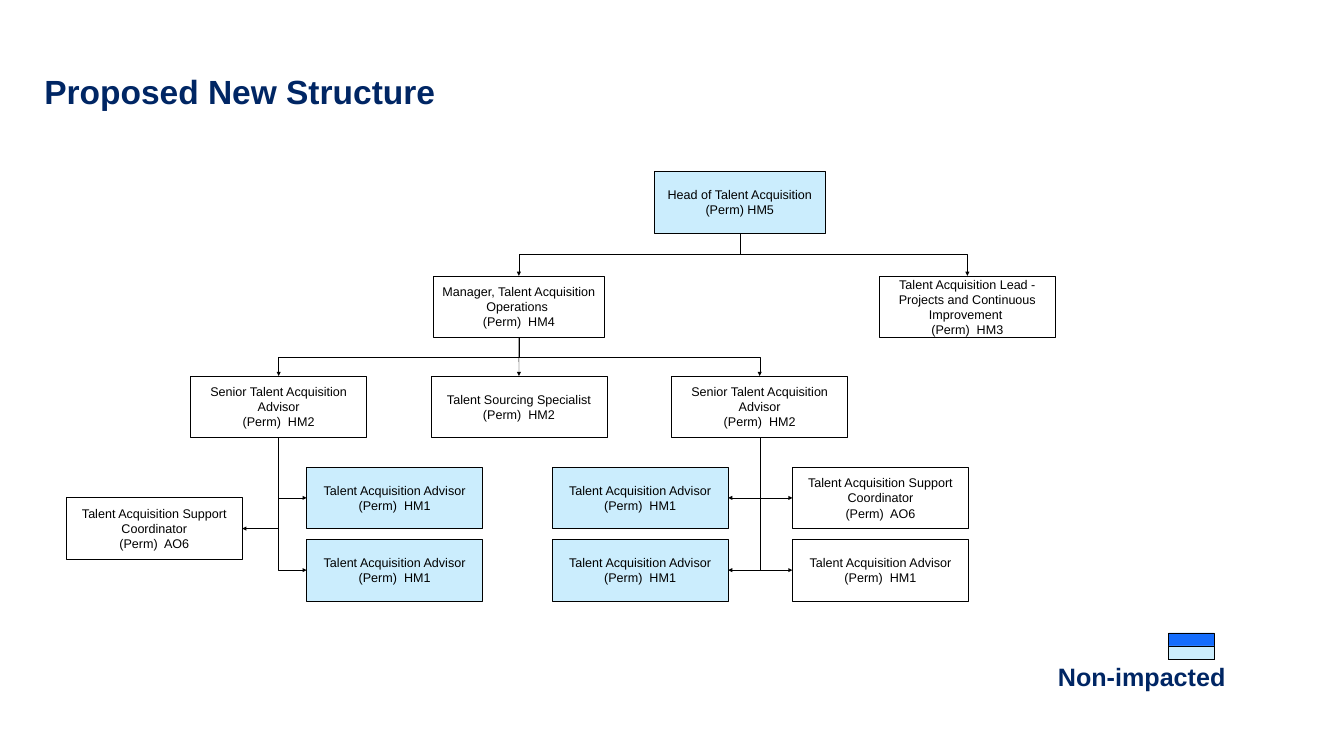
from lxml import etree
from pptx import Presentation
from pptx.dml.color import RGBColor
from pptx.enum import shapes, text
from pptx.oxml.ns import qn
from pptx.util import Cm, Pt

NAVY = RGBColor(0x00, 0x26, 0x64)
BLACK = RGBColor(0x00, 0x00, 0x00)
BLUE = RGBColor(0x14, 0x6C, 0xFD)
LIGHT_BLUE = RGBColor(0xCB, 0xED, 0xFD)
FONT = "Arial"
BOTTOM, TOP, LEFT, RIGHT = 2, 0, 1, 3

presentation = Presentation()
presentation.slide_width, presentation.slide_height = Cm(67.89), Cm(38.1)
slide = presentation.slides.add_slide(presentation.slide_layouts[6])


def add_box(left, top, width, height, fill, lines=()):
    """Add a black-edged rectangle with one centred paragraph per line."""
    shape = slide.shapes.add_shape(
        shapes.MSO_SHAPE.RECTANGLE, Cm(left), Cm(top), Cm(width), Cm(height))
    shape.shadow.inherit = False
    if fill is None:
        shape.fill.background()
    else:
        shape.fill.solid()
        shape.fill.fore_color.rgb = fill
    shape.line.color.rgb, shape.line.width = BLACK, Pt(1)
    frame = shape.text_frame
    frame.word_wrap, frame.vertical_anchor = True, text.MSO_ANCHOR.MIDDLE
    for index, line in enumerate(lines):
        paragraph = frame.add_paragraph() if index else frame.paragraphs[0]
        paragraph.text, paragraph.alignment = line, text.PP_ALIGN.CENTER
        for name, value in {"name": FONT, "size": Pt(18)}.items():
            setattr(paragraph.font, name, value)
        paragraph.font.color.rgb = BLACK
    return shape


def add_link(parent, child, side):
    """Run an arrow down from the parent's bottom to one side of the child."""
    x1, y1 = parent.left + parent.width // 2, parent.top + parent.height
    x2, y2 = {
        TOP: (child.left + child.width // 2, child.top),
        LEFT: (child.left, child.top + child.height // 2),
        RIGHT: (child.left + child.width, child.top + child.height // 2),
    }[side]
    straight = abs(x2 - x1) < Cm(0.1)
    kind = shapes.MSO_CONNECTOR.STRAIGHT if straight else shapes.MSO_CONNECTOR.ELBOW
    connector = slide.shapes.add_connector(kind, x1, y1, x2, y2)
    connector.begin_connect(parent, BOTTOM)
    connector.end_connect(child, side)
    connector.line.color.rgb, connector.line.width = BLACK, Pt(0.5)
    properties = connector._element.spPr
    if not straight:
        # A bent connector leaves sideways, so turn it to leave downwards.
        across, down = abs(x2 - x1), y2 - y1
        connector.left, connector.top = (x1 + x2 - down) // 2, (y1 + y2 - across) // 2
        connector.width, connector.height = down, across
        transform = properties.find(qn("a:xfrm"))
        transform.attrib.pop("flipH", None)
        transform.set("rot", "5400000" if x2 < x1 else "16200000")
        if x2 > x1:
            transform.set("flipH", "1")
        if side != TOP:
            properties.find(qn("a:prstGeom")).set("prst", "bentConnector2")
    etree.SubElement(properties.find(qn("a:ln")), qn("a:tailEnd"), type="triangle")
    etree.SubElement(properties, qn("a:effectLst"))


# Title and legend
for left, top, width, height, words, size, spacing in (
        (2.24, 3.84, 62.97, 1.5, "Proposed New Structure", 48, 0.9),
        (53.44, 33.43, 12.6, 2.59, "Non-impacted", 36, 1.0)):
    frame = slide.shapes.add_textbox(Cm(left), Cm(top), Cm(width), Cm(height)).text_frame
    for name in ("margin_left", "margin_top", "margin_right", "margin_bottom"):
        setattr(frame, name, 0)
    frame.word_wrap = True
    paragraph = frame.paragraphs[0]
    paragraph.text, paragraph.line_spacing = words, spacing
    for name, value in {"name": FONT, "size": Pt(size), "bold": True}.items():
        setattr(paragraph.font, name, value)
    paragraph.font.color.rgb = NAVY
add_box(59.03, 31.98, 2.31, 1.32, BLUE)
add_box(59.03, 32.64, 2.31, 0.66, LIGHT_BLUE)

# Positions: key, left, top, width, fill, lines
WIDE, NARROW, HEIGHT = 8.89, 8.64, 3.12
LEVELS = (8.66, 13.94, 19.0, 23.6, 27.25)
ADVISOR = ("Talent Acquisition Advisor", "(Perm)  HM1")
SENIOR = ("Senior Talent Acquisition Advisor", "(Perm)  HM2")
SUPPORT = ("Talent Acquisition Support Coordinator", "(Perm)  AO6")
positions = (
    ("head", 33.05, LEVELS[0], NARROW, LIGHT_BLUE,
     ("Head of Talent Acquisition (Perm) HM5",)),
    ("manager", 21.89, LEVELS[1], NARROW, None,
     ("Manager, Talent Acquisition Operations ", "(Perm)  HM4")),
    ("lead", 44.42, LEVELS[1], WIDE, None,
     ("Talent Acquisition Lead - Projects and Continuous Improvement ", "(Perm)  HM3")),
    ("left senior", 9.63, LEVELS[2], WIDE, None, SENIOR),
    ("specialist", 21.77, LEVELS[2], WIDE, None,
     ("Talent Sourcing Specialist", "(Perm)  HM2")),
    ("right senior", 33.93, LEVELS[2], WIDE, None, SENIOR),
    ("left support", 3.35, 25.15, WIDE, None, SUPPORT),
    ("left advisor 1", 15.49, LEVELS[3], WIDE, LIGHT_BLUE, ADVISOR),
    ("left advisor 2", 15.49, LEVELS[4], WIDE, LIGHT_BLUE, ADVISOR),
    ("middle advisor 1", 27.89, LEVELS[3], WIDE, LIGHT_BLUE, ADVISOR),
    ("middle advisor 2", 27.89, LEVELS[4], WIDE, LIGHT_BLUE, ADVISOR),
    ("right support", 40.03, LEVELS[3], WIDE, None, SUPPORT),
    ("right advisor", 40.03, LEVELS[4], WIDE, None, ADVISOR),
)
boxes = {key: add_box(left, top, width, HEIGHT, fill, lines)
         for key, left, top, width, fill, lines in positions}

# Reporting lines
for parent, side, children in (
        ("head", TOP, ("manager", "lead")),
        ("manager", TOP, ("left senior", "specialist", "right senior")),
        ("left senior", RIGHT, ("left support",)),
        ("left senior", LEFT, ("left advisor 1", "left advisor 2")),
        ("right senior", RIGHT, ("middle advisor 1", "middle advisor 2")),
        ("right senior", LEFT, ("right support", "right advisor"))):
    for child in children:
        add_link(boxes[parent], boxes[child], side)

presentation.save("out.pptx")
